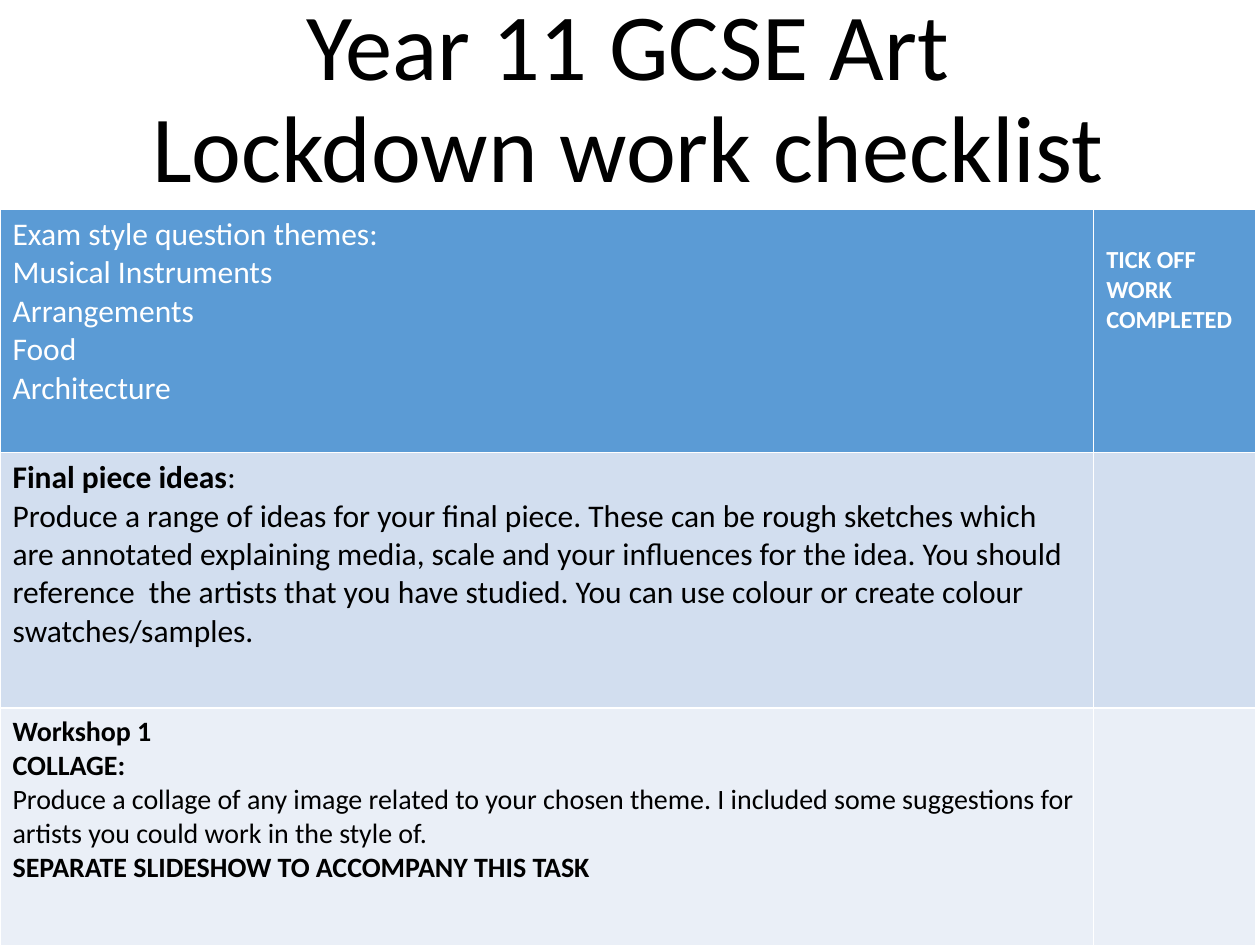
from pptx import Presentation
from pptx import util as u
from pptx.dml.color import RGBColor
from pptx.enum import text
from pptx.oxml import parse_xml
from pptx.oxml.ns import nsdecls

THEME = dict(
    font="Calibri", black="000000", white="FFFFFF",
    fills=["5B9BD5", "D2DEEF", "EAEFF7"],
    title=54, body=18, task=16, tick=14,
)


def write(tf, paragraphs, size, color, align=text.PP_ALIGN.LEFT, spacing=1.0):
    tf.word_wrap = True
    for i, runs in enumerate(paragraphs):
        p = tf.paragraphs[0] if i == 0 else tf.add_paragraph()
        p.alignment = align
        p.line_spacing = spacing
        for n, (words, bold) in enumerate(runs):
            for k, line in enumerate(words.split("\n")):
                if k:
                    p.add_line_break()
                r = p.add_run()
                r.text = line
                r.font.name = THEME["font"]
                r.font.size = u.Pt(size)
                r.font.bold = bold
                r.font.color.rgb = RGBColor.from_string(color)


def border(cell, color, points):
    props = cell._tc.get_or_add_tcPr()
    for i, side in enumerate(["lnL", "lnR", "lnT", "lnB"]):
        props.insert(i, parse_xml(
            f'<a:{side} {nsdecls("a")} w="{u.Pt(points)}"><a:solidFill>'
            f'<a:srgbClr val="{color}"/></a:solidFill></a:{side}>'))


prs = Presentation()
prs.slide_width, prs.slide_height = u.Inches(10), u.Inches(7.5)
col, row = prs.slide_width / 100, prs.slide_height / 100
slide = prs.slides.add_slide(prs.slide_layouts[6])

col_widths = [86.8, 12.9]
row_heights = [25.73, 27.07, 31.33]
table_top = 22.13
width = int(sum(col_widths) * col)

sp = slide.shapes.add_textbox(0, int(-1.07 * row), width, int(23.2 * row))
sp.text_frame.vertical_anchor = text.MSO_ANCHOR.BOTTOM
write(sp.text_frame, [[("Year 11 GCSE Art\nLockdown work checklist", False)]],
      THEME["title"], THEME["black"], text.PP_ALIGN.CENTER, 0.9)

themes = ["Exam style question themes:", "Musical Instruments", "Arrangements",
          "Food", "Architecture"]
ideas = [
    [("Final piece ideas", True), (":", False)],
    [("Produce a range of ideas for your final piece. These can be rough sketches "
      "which are annotated explaining media, scale and your influences for the idea. "
      "You should reference  the artists that you have studied. You can use colour "
      "or create colour swatches/samples.", False)],
]
workshop = [
    [("Workshop 1", True)],
    [("COLLAGE:", True)],
    [("Produce a collage of any image related to your chosen theme. I included some "
      "suggestions for artists you could work in the style of.", False)],
    [("SEPARATE SLIDESHOW TO ACCOMPANY THIS TASK", True)],
]
tasks = [
    ([[(theme, False)] for theme in themes], THEME["body"], THEME["white"]),
    (ideas, THEME["body"], THEME["black"]),
    (workshop, THEME["task"], THEME["black"]),
]

table = slide.shapes.add_table(
    len(row_heights), len(col_widths), 0, int(table_top * row),
    width, int(sum(row_heights) * row)).table
for column, share in zip(table.columns, col_widths):
    column.width = int(share * col)
for i, (paragraphs, size, color) in enumerate(tasks):
    table.rows[i].height = int(row_heights[i] * row)
    for cell in table.rows[i].cells:
        cell.fill.solid()
        cell.fill.fore_color.rgb = RGBColor.from_string(THEME["fills"][i])
        border(cell, THEME["white"], 1)
    write(table.cell(i, 0).text_frame, paragraphs, size, color)

tick = table.cell(0, 1)
tick.margin_top = int(3.85 * row)
write(tick.text_frame, [[("TICK OFF WORK COMPLETED", True)]],
      THEME["tick"], THEME["white"])

prs.save("out.pptx")
